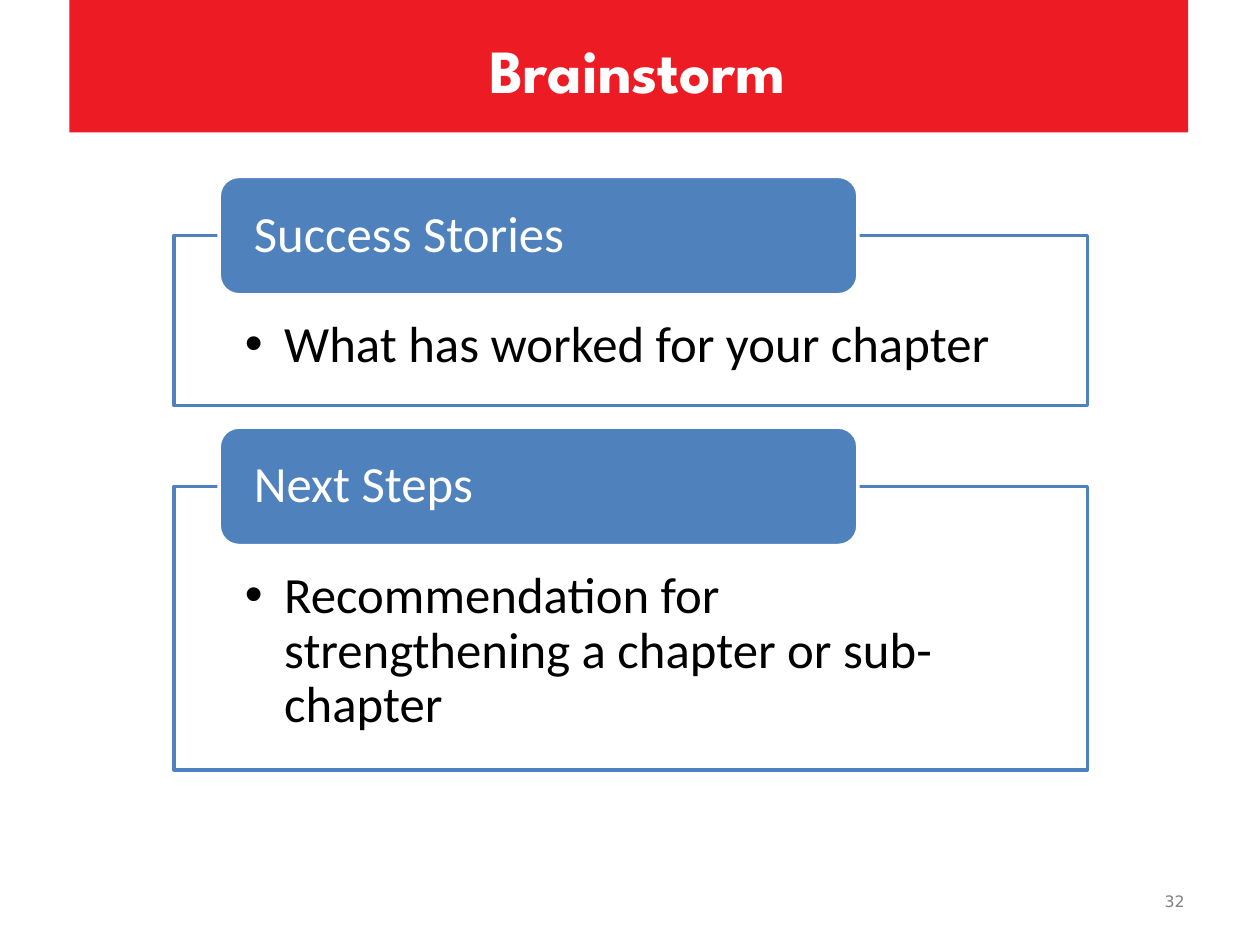
from lxml.etree import SubElement
from pptx import Presentation
from pptx.dml.color import RGBColor
from pptx.enum.shapes import MSO_SHAPE
from pptx.enum.text import MSO_ANCHOR, PP_ALIGN
from pptx.oxml.ns import qn
from pptx.util import Pt

COLORS = {"red": "ED1C24", "blue": "4F81BD", "white": "FFFFFF", "black": "000000", "gray": "808080"}
SECTIONS = [
    ("Success Stories", "What has worked for your chapter", 97.2),
    ("Next Steps", "Recommendation for strengthening a chapter or sub-chapter", 162),
]
FIRST_TAB_TOP, TAB_HEIGHT, TAB_RISE, SECTION_GAP = 100.8, 67.7, 33.8, 12.3


def color(name):
    """Return the named palette color."""
    return RGBColor.from_string(COLORS[name])


def apply(target, formats):
    """Set every attribute listed in a dict of format values."""
    for name, value in formats.items():
        setattr(target, name, value)


def add_panel(page, kind, bounds, fill, line=None):
    """Add a filled shape with an optional outline."""
    panel = page.shapes.add_shape(kind, *map(Pt, bounds))
    panel.shadow.inherit = False
    panel.fill.solid()
    panel.fill.fore_color.rgb = color(fill)
    if line:
        panel.line.color.rgb = color(line)
        panel.line.width = Pt(2)
    else:
        panel.line.fill.background()
    return panel


def write(box, text, font, size, ink, insets, anchor=MSO_ANCHOR.MIDDLE,
          align=PP_ALIGN.LEFT, spacing=1.0, bold=False):
    """Write one formatted paragraph into a shape and return it."""
    frame = box.text_frame
    left, top, right, bottom = map(Pt, insets)
    apply(frame, {"word_wrap": True, "vertical_anchor": anchor, "margin_left": left,
                  "margin_top": top, "margin_right": right, "margin_bottom": bottom})
    para = frame.paragraphs[0]
    apply(para, {"alignment": align, "line_spacing": spacing})
    span = para.add_run()
    span.text = text
    apply(span.font, {"name": font, "size": Pt(size), "bold": bold})
    span.font.color.rgb = color(ink)
    return para


def add_bullet(para, indent):
    """Give a paragraph a round bullet with a hanging indent."""
    properties = para._p.get_or_add_pPr()
    properties.set("marL", str(Pt(indent)))
    properties.set("indent", str(-Pt(indent)))
    SubElement(properties, qn("a:buFont"), typeface="Arial")
    SubElement(properties, qn("a:buChar"), char="•")


def add_section(page, top, heading, detail, height):
    """Add an outlined panel with a rounded heading tab and return its bottom."""
    panel_top = top + TAB_RISE
    panel = add_panel(page, MSO_SHAPE.RECTANGLE, (99.4, panel_top, 522, height), "white", "blue")
    para = write(panel, detail, "Calibri", 29, "black", (40.5, 47.5, 40.5, 16.5),
                 anchor=MSO_ANCHOR.TOP, spacing=0.9)
    add_bullet(para, 22.5)
    tab = add_panel(page, MSO_SHAPE.ROUNDED_RECTANGLE, (125.3, top, 365, TAB_HEIGHT), "blue", "white")
    write(tab, heading, "Calibri", 29, "white", (16.5, 0, 16.5, 0), spacing=0.9)
    return panel_top + height


def main():
    """Build the brainstorm slide."""
    deck = Presentation()
    apply(deck, {"slide_width": Pt(720), "slide_height": Pt(540)})
    page = deck.slides.add_slide(deck.slide_layouts[6])

    add_panel(page, MSO_SHAPE.RECTANGLE, (39.6, 0, 639.4, 75.6), "red")
    title = page.shapes.add_textbox(*map(Pt, (44.6, 2.9, 639.4, 72.7)))
    write(title, "Brainstorm", "League Spartan", 35, "white", (7.2, 3.6, 7.2, 3.6),
          align=PP_ALIGN.CENTER, bold=True)

    top = FIRST_TAB_TOP
    for heading, detail, height in SECTIONS:
        top = add_section(page, top, heading, detail, height) + SECTION_GAP

    number = page.shapes.add_textbox(*map(Pt, (516, 500.5, 168, 28.8)))
    write(number, "32", "DejaVu Sans", 9, "gray", (7.2, 3.6, 7.2, 3.6), align=PP_ALIGN.RIGHT)
    deck.save("out.pptx")


if __name__ == "__main__":
    main()
